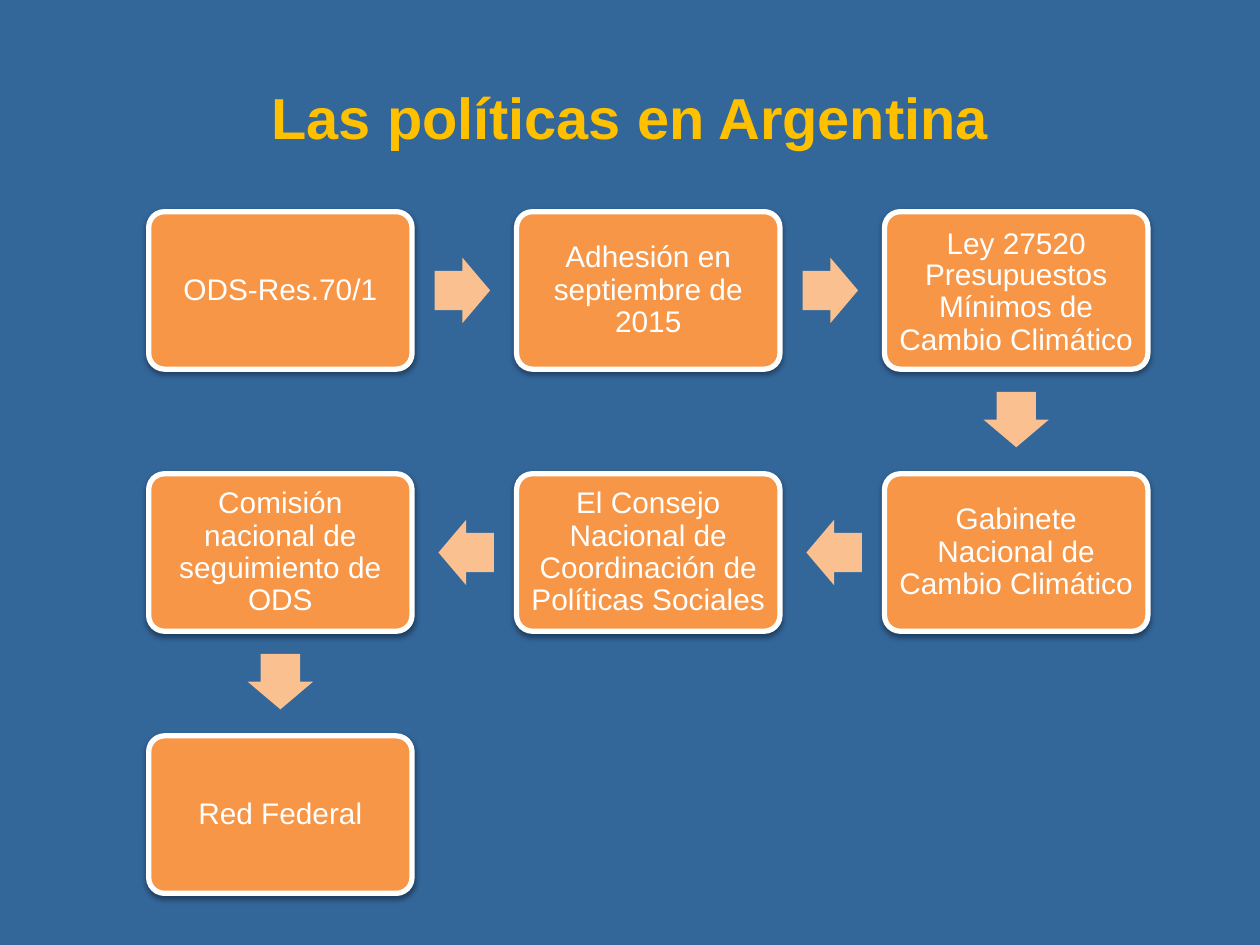
import pptx
import pptx.util
import pptx.dml.color
import pptx.enum.shapes
import pptx.enum.text
import pptx.oxml
import pptx.oxml.ns

Inches, Pt = pptx.util.Inches, pptx.util.Pt
SHAPE = pptx.enum.shapes.MSO_SHAPE


def color(value):
    return pptx.dml.color.RGBColor.from_string(value)


class Deck:
    font = "Arial"
    background, box_fill, arrow_fill = "336699", "F79646", "FAC090"
    title_color, text_color = "FFC000", "FFFFFF"
    left, top = 1.18, 1.68
    col_step, row_step = 2.92, 2.08
    box_w, box_h = 2.09, 1.25
    arrow_w, arrow_h, arrow_offset = 0.44, 0.52, 0.4

    def __init__(self):
        self.prs = pptx.Presentation()
        self.prs.slide_width, self.prs.slide_height = Inches(10), Inches(7.5)
        self.s = self.prs.slides.add_slide(self.prs.slide_layouts[6])
        fill = self.s.background.fill
        fill.solid()
        fill.fore_color.rgb = color(self.background)

    def add_text(self, tf, lines, size, ink, bold=False):
        tf.word_wrap = True
        tf.vertical_anchor = pptx.enum.text.MSO_ANCHOR.MIDDLE
        for i, line in enumerate(lines):
            p = tf.paragraphs[0] if i == 0 else tf.add_paragraph()
            p.alignment = pptx.enum.text.PP_ALIGN.CENTER
            r = p.add_run()
            r.text = line
            r.font.name, r.font.size, r.font.bold = self.font, Pt(size), bold
            r.font.color.rgb = color(ink)

    def title(self, text):
        w, h = self.prs.slide_width, self.prs.slide_height
        sp = self.s.shapes.add_textbox(
            int(w * 0.05), int(h * 0.04), int(w * 0.9), Inches(1.25))
        self.add_text(sp.text_frame, [text], 33, self.title_color, True)

    def shape(self, kind, x, y, w, h, fill):
        sp = self.s.shapes.add_shape(kind, Inches(x), Inches(y), Inches(w), Inches(h))
        sp.shadow.inherit = False
        sp.fill.solid()
        sp.fill.fore_color.rgb = color(fill)
        return sp

    def soften(self, sp):
        effects = sp._element.spPr.find(pptx.oxml.ns.qn("a:effectLst"))
        effects.append(pptx.oxml.parse_xml(
            f'<a:outerShdw {pptx.oxml.ns.nsdecls("a")} blurRad="{Pt(3.1)}" '
            f'dist="{Pt(1.6)}" dir="5400000" rotWithShape="0">'
            '<a:srgbClr val="000000"><a:alpha val="38000"/></a:srgbClr>'
            '</a:outerShdw>'))

    def box(self, col, row, lines):
        sp = self.shape(SHAPE.ROUNDED_RECTANGLE,
                        self.left + col * self.col_step, self.top + row * self.row_step,
                        self.box_w, self.box_h, self.box_fill)
        sp.adjustments[0] = 0.1
        sp.line.color.rgb = color(self.text_color)
        sp.line.width = Pt(3)
        self.soften(sp)
        tf = sp.text_frame
        tf.margin_left = tf.margin_right = tf.margin_top = tf.margin_bottom = Inches(0.07)
        self.add_text(tf, lines, 17, self.text_color)
        tf.paragraphs[-1].line_spacing = 0.9

    def arrow(self, start, end):
        dx, dy = end[0] - start[0], end[1] - start[1]
        x = (self.left + start[0] * self.col_step + self.box_w / 2
             + dx * (self.box_w / 2 + self.arrow_offset))
        y = (self.top + start[1] * self.row_step + self.box_h / 2
             + dy * (self.box_h / 2 + self.arrow_offset))
        sp = self.shape(SHAPE.RIGHT_ARROW, x - self.arrow_w / 2, y - self.arrow_h / 2,
                        self.arrow_w, self.arrow_h, self.arrow_fill)
        sp.adjustments[0], sp.adjustments[1] = 0.6, 0.5
        sp.line.fill.background()
        sp.rotation = 90 if dy else 0 if dx > 0 else 180


def main():
    steps = [
        ((0, 0), ["ODS-Res.70/1"]),
        ((1, 0), ["Adhesión en septiembre de 2015"]),
        ((2, 0), ["Ley 27520", "Presupuestos Mínimos de Cambio Climático"]),
        ((2, 1), ["Gabinete Nacional de Cambio Climático"]),
        ((1, 1), ["El Consejo Nacional de Coordinación de Políticas Sociales"]),
        ((0, 1), ["Comisión nacional de seguimiento de ODS"]),
        ((0, 2), ["Red Federal"]),
    ]
    deck = Deck()
    deck.title("Las políticas en Argentina")
    for i, (cell, lines) in enumerate(steps):
        if i:
            deck.arrow(steps[i - 1][0], cell)
        deck.box(*cell, lines)
    deck.prs.save("out.pptx")


if __name__ == "__main__":
    main()
